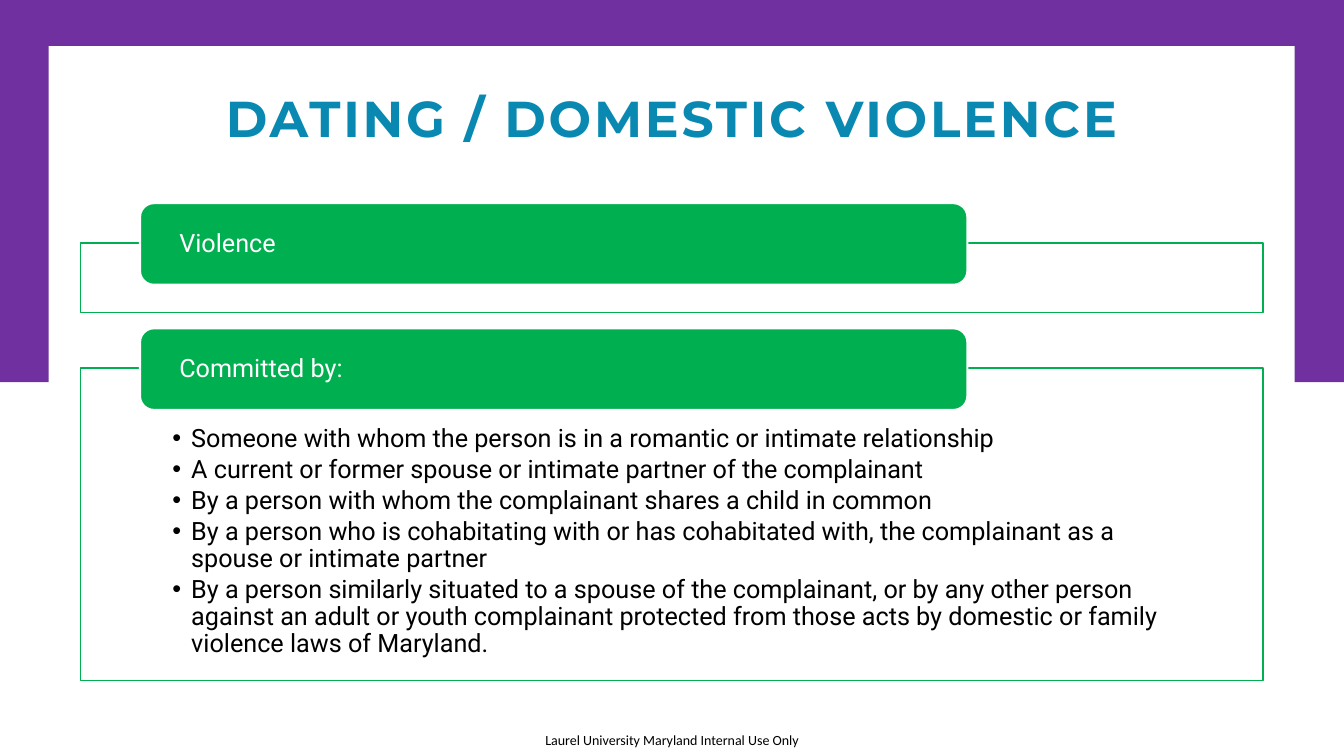
from pptx import Presentation
from pptx.dml.color import RGBColor
from pptx.enum.shapes import MSO_SHAPE
from pptx.enum.text import MSO_ANCHOR, MSO_AUTO_SIZE, PP_ALIGN
from pptx.util import Pt

PURPLE = RGBColor(0x70, 0x30, 0xA0)
GREEN = RGBColor(0x00, 0xB0, 0x50)
BLUE = RGBColor(0x09, 0x89, 0xB1)
WHITE = RGBColor(0xFF, 0xFF, 0xFF)
BLACK = RGBColor(0, 0, 0)

BOX_LEFT, BOX_WIDTH = 57.6, 844.6
HEADER_LEFT, HEADER_WIDTH, HEADER_HEIGHT = 101, 591, 58.3
HEADER_RISE = 28.4  # how far a header stands above its box

RELATIONS = [
    "Someone with whom the person is in a romantic or intimate relationship",
    "A current or former spouse or intimate partner of the complainant",
    "By a person with whom the complainant shares a child in common",
    "By a person who is cohabitating with or has cohabitated with, "
    "the complainant as a spouse or intimate partner",
    "By a person similarly situated to a spouse of the complainant, or by any "
    "other person against an adult or youth complainant protected from those "
    "acts by domestic or family violence laws of Maryland.",
]


def place(sp, left, top, width, height):
    sp.left, sp.top, sp.width, sp.height = Pt(left), Pt(top), Pt(width), Pt(height)


def bring_to_front(sp):
    sp._element.getparent().append(sp._element)


def paint(sp, fill, line=None, weight=1):
    sp.fill.solid()
    sp.fill.fore_color.rgb = fill
    if line is None:
        sp.line.fill.background()
    else:
        sp.line.color.rgb = line
        sp.line.width = Pt(weight)


def set_frame(tf, anchor, left=0, top=0, right=0, bottom=0):
    tf.word_wrap = True
    tf.auto_size = MSO_AUTO_SIZE.NONE
    tf.vertical_anchor = anchor
    tf.margin_left, tf.margin_right = Pt(left), Pt(right)
    tf.margin_top, tf.margin_bottom = Pt(top), Pt(bottom)


def set_font(p, name, size, color, bold=False):
    p.font.name, p.font.size, p.font.bold = name, Pt(size), bold
    p.font.color.rgb = color


def add_block(s, shape, left, top, width, height, fill, line=None, weight=1):
    sp = s.shapes.add_shape(shape, Pt(left), Pt(top), Pt(width), Pt(height))
    sp.shadow.inherit = False
    paint(sp, fill, line, weight)
    return sp


def add_header(s, text, box_top):
    sp = add_block(s, MSO_SHAPE.ROUNDED_RECTANGLE, HEADER_LEFT - 1,
                   box_top - HEADER_RISE, HEADER_WIDTH, HEADER_HEIGHT,
                   GREEN, WHITE, 1.5)
    sp.adjustments[0] = 0.17
    set_frame(sp.text_frame, MSO_ANCHOR.MIDDLE, left=25.2, right=25.2)
    p = sp.text_frame.paragraphs[0]
    p.text = text
    p.alignment = PP_ALIGN.LEFT
    p.line_spacing = 0.9
    set_font(p, "Roboto", 18, WHITE)


def add_footer(s, text):
    sp = s.shapes.add_textbox(Pt(360), Pt(522.7), Pt(240), Pt(12.2))
    set_frame(sp.text_frame, MSO_ANCHOR.TOP)
    p = sp.text_frame.paragraphs[0]
    p.text = text
    p.alignment = PP_ALIGN.CENTER
    set_font(p, "Calibri", 10, BLACK)


def fill_title(sp, text):
    place(sp, 66, 25.2, 828, 80)
    bring_to_front(sp)
    set_frame(sp.text_frame, MSO_ANCHOR.BOTTOM, left=7.2, right=7.2)
    p = sp.text_frame.paragraphs[0]
    r = p.add_run()
    r.text = text
    p.alignment = PP_ALIGN.CENTER
    set_font(p, "Montserrat", 36, BLUE, bold=True)
    r._r.get_or_add_rPr().set("spc", "200")


def fill_list(sp, items, top, height):
    place(sp, BOX_LEFT, top, BOX_WIDTH, height)
    bring_to_front(sp)
    paint(sp, WHITE, GREEN)
    tf = sp.text_frame
    set_frame(tf, MSO_ANCHOR.TOP, left=65.5, top=41, right=65.5, bottom=10)
    for i, item in enumerate(items):
        p = tf.add_paragraph() if i else tf.paragraphs[0]
        p.text = item
        p.line_spacing = 0.9
        p.space_before, p.space_after = Pt(0), Pt(2.7)
        set_font(p, "Roboto", 18, BLACK)
        pPr = p._p.get_or_add_pPr()
        pPr.set("marL", str(Pt(13.5)))
        pPr.set("indent", str(-Pt(13.5)))


def main():
    prs = Presentation()
    prs.slide_width, prs.slide_height = Pt(960), Pt(540)
    s = prs.slides.add_slide(prs.slide_layouts[1])
    title, body = s.placeholders[0], s.placeholders[1]

    # Purple frame, white panel and footer
    add_footer(s, "Laurel University Maryland Internal Use Only")
    add_block(s, MSO_SHAPE.RECTANGLE, 0, 0, 960, 273, PURPLE)
    add_block(s, MSO_SHAPE.RECTANGLE, 34.8, 33, 890, 474.5, WHITE)

    # Title
    fill_title(title, "DATING / DOMESTIC VIOLENCE")

    # First box
    violence_top, committed_top = 173.5, 262.9
    add_block(s, MSO_SHAPE.RECTANGLE, BOX_LEFT, violence_top, BOX_WIDTH, 49.7,
              WHITE, GREEN)
    add_header(s, "Violence", violence_top)

    # Second box with the list
    fill_list(body, RELATIONS, committed_top, 223.3)
    add_header(s, "Committed by:", committed_top)

    prs.save("out.pptx")


if __name__ == "__main__":
    main()
